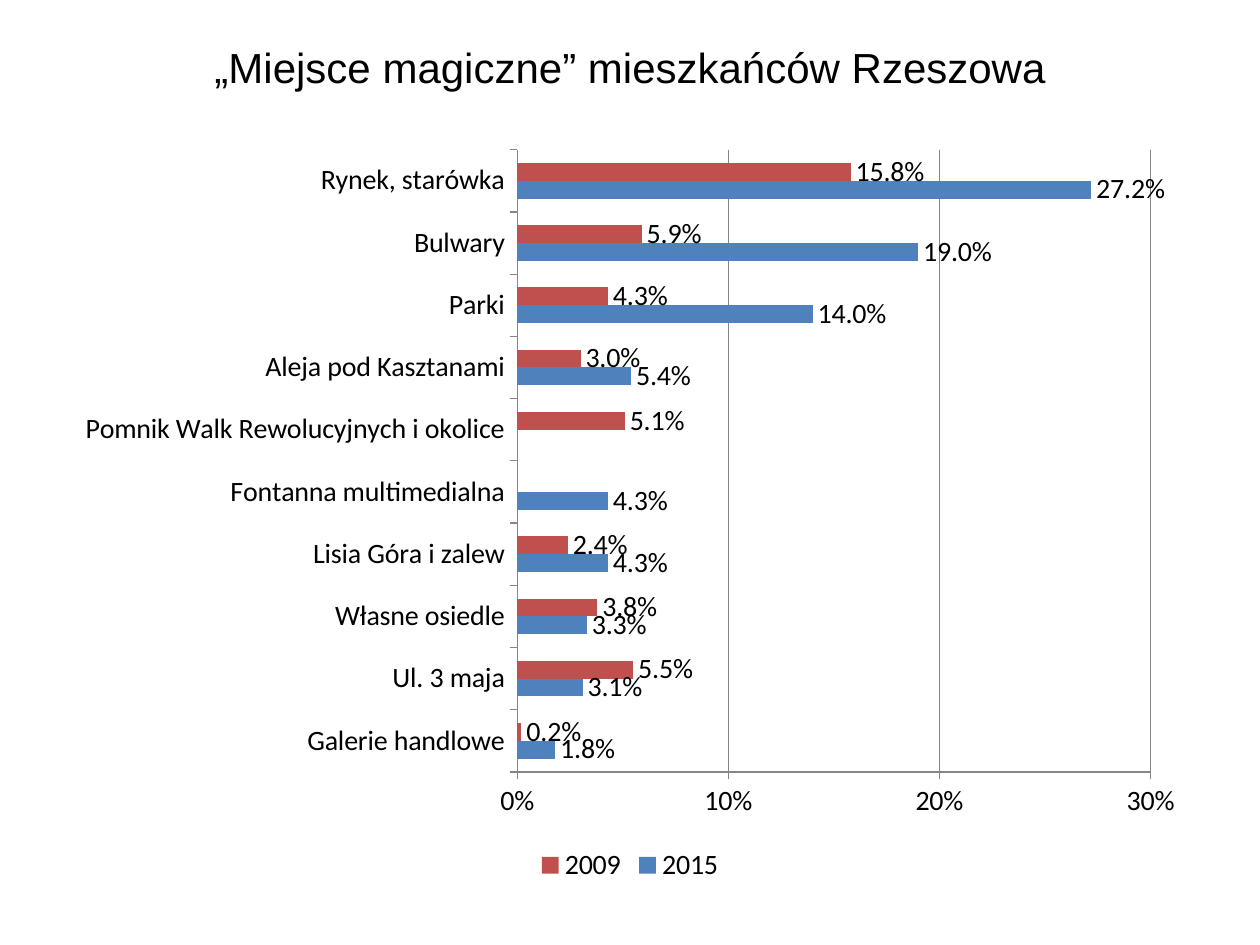
"""Build a slide comparing the favourite places of Rzeszów residents in 2009 and 2015."""
from pptx import Presentation
from pptx.chart.data import CategoryChartData
from pptx.dml.color import RGBColor
from pptx.enum.chart import XL_CHART_TYPE, XL_LABEL_POSITION, XL_LEGEND_POSITION, XL_TICK_MARK
from pptx.enum.text import MSO_ANCHOR, PP_ALIGN
from pptx.util import Pt

BAR_CLUSTERED = XL_CHART_TYPE.BAR_CLUSTERED
OUTSIDE_END = XL_LABEL_POSITION.OUTSIDE_END
BOTTOM = XL_LEGEND_POSITION.BOTTOM
TICK_OUT = XL_TICK_MARK.OUTSIDE
MIDDLE = MSO_ANCHOR.MIDDLE
CENTER = PP_ALIGN.CENTER

TITLE = "„Miejsce magiczne” mieszkańców Rzeszowa"
YEARS = ("2009", "2015")
PLACES = [
    ("Rynek, starówka", 0.158, 0.272),
    ("Bulwary", 0.059, 0.19),
    ("Parki", 0.043, 0.14),
    ("Aleja pod Kasztanami", 0.03, 0.054),
    ("Pomnik Walk Rewolucyjnych i okolice", 0.051, None),
    ("Fontanna multimedialna", None, 0.043),
    ("Lisia Góra i zalew", 0.024, 0.043),
    ("Własne osiedle", 0.038, 0.033),
    ("Ul. 3 maja", 0.055, 0.031),
    ("Galerie handlowe", 0.002, 0.018),
]
COLORS = {"2009": "C0504D", "2015": "4F81BD", "text": "000000", "line": "868686"}
MARGIN, WIDTH = 36, 648


def style_font(font, name, size):
    font.name = name
    font.size = Pt(size)
    font.color.rgb = RGBColor.from_string(COLORS["text"])


def style_line(line):
    line.color.rgb = RGBColor.from_string(COLORS["line"])
    line.width = Pt(0.75)


def add_title(page):
    box = page.shapes.add_textbox(Pt(MARGIN), Pt(21.6), Pt(WIDTH), Pt(33))
    frame = box.text_frame
    frame.word_wrap = True
    frame.vertical_anchor = MIDDLE
    para = frame.paragraphs[0]
    para.text = TITLE
    para.alignment = CENTER
    style_font(para.font, "Arial", 24)


def add_places_chart(page):
    names, *columns = zip(*reversed(PLACES))
    data = CategoryChartData(number_format="###0.0%")
    data.categories = names
    for year, values in reversed(list(zip(YEARS, columns))):
        data.add_series(year, values)

    chart = page.shapes.add_chart(
        BAR_CLUSTERED, Pt(MARGIN), Pt(77), Pt(WIDTH), Pt(430.5), data
    ).chart
    style_font(chart.font, "Calibri", 16)
    chart.has_title = False
    chart.has_legend = True
    chart.legend.position = BOTTOM
    chart.legend.include_in_layout = False

    for axis in (chart.category_axis, chart.value_axis):
        axis.major_tick_mark = TICK_OUT
        style_line(axis.format.line)
    scale = chart.value_axis
    scale.minimum_scale, scale.maximum_scale, scale.major_unit = 0, 0.3, 0.1
    scale.tick_labels.number_format = "###0%"
    scale.tick_labels.number_format_is_linked = False
    style_line(scale.major_gridlines.format.line)

    plot = chart.plots[0]
    plot.gap_width = 150
    plot.vary_by_categories = False
    for series in plot.series:
        series.invert_if_negative = False
        series.format.fill.solid()
        series.format.fill.fore_color.rgb = RGBColor.from_string(COLORS[series.name])
        labels = series.data_labels
        labels.show_value = True
        labels.number_format = "###0.0%"
        labels.number_format_is_linked = False
        labels.position = OUTSIDE_END


def main():
    deck = Presentation()
    deck.slide_width, deck.slide_height = Pt(720), Pt(540)
    page = deck.slides.add_slide(deck.slide_layouts[6])
    add_title(page)
    add_places_chart(page)
    deck.save("out.pptx")


if __name__ == "__main__":
    main()
